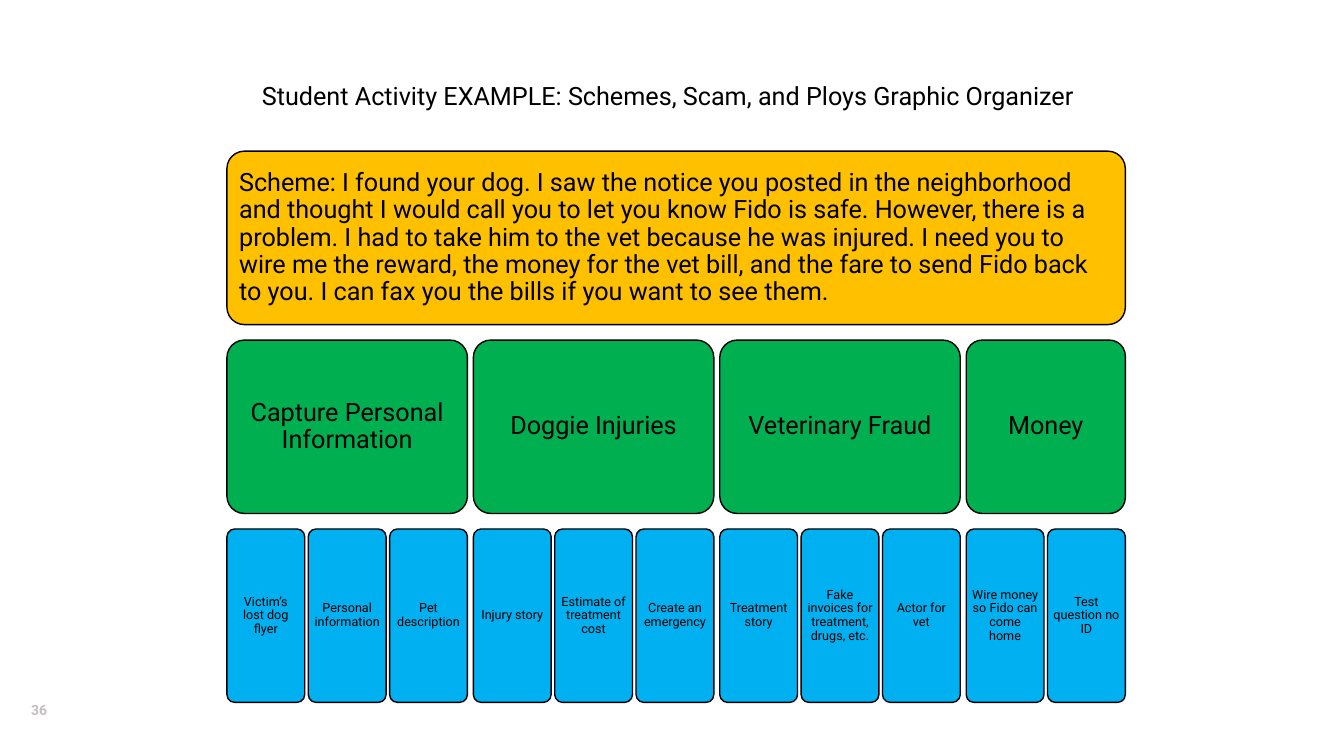
from dataclasses import dataclass

from pptx import Presentation
from pptx.dml.color import RGBColor
from pptx.enum import shapes, text
from pptx.util import Cm, Pt


@dataclass(frozen=True)
class Theme:
    font: str = "Roboto"
    ink: str = "000000"
    muted: str = "C4BFC0"
    scheme: str = "FFC000"
    branch: str = "00B050"
    leaf: str = "00B0F0"
    body_size: int = 18
    leaf_size: int = 9
    number_size: int = 10


SCHEME = (
    "Scheme: I found your dog. I saw the notice you posted in the neighborhood "
    "and thought I would call you to let you know Fido is safe. However, there is "
    "a problem. I had to take him to the vet because he was injured. I need you to "
    "wire me the reward, the money for the vet bill, and the fare to send Fido back "
    "to you. I can fax you the bills if you want to see them."
)
BRANCHES = {
    "Capture Personal Information": [
        "Victim’s lost dog flyer", "Personal information", "Pet description"],
    "Doggie Injuries": [
        "Injury story", "Estimate of treatment cost", "Create an emergency"],
    "Veterinary Fraud": [
        "Treatment story", "Fake invoices for treatment, drugs, etc.", "Actor for vet"],
    "Money": ["Wire money so Fido can come home", "Test question no ID"],
}

# Lengths in centimetres
LEFT = 5.72
SCHEME_TOP, BRANCH_TOP, LEAF_TOP = (3.81 + 4.76 * row for row in range(3))
ROW_HEIGHT = 4.37
LEAF_WIDTH, LEAF_PITCH = 1.96, 2.05
BRANCH_GAP = 0.15


class OrganizerPage:
    def __init__(self, deck, theme):
        self.theme = theme
        self.page = deck.slides.add_slide(deck.slide_layouts[5])

    def set_text(self, box, words, size, color, align, inset, spacing=1.0, bold=False):
        frame = box.text_frame
        frame.text = words
        frame.word_wrap = True
        frame.auto_size = text.MSO_AUTO_SIZE.NONE
        frame.vertical_anchor = text.MSO_ANCHOR.MIDDLE
        frame.margin_left = frame.margin_right = Cm(inset)
        frame.margin_top = frame.margin_bottom = Cm(min(inset, 0.18))
        para = frame.paragraphs[0]
        para.alignment = align
        para.line_spacing = spacing
        para.space_before = Pt(0)
        for span in para.runs:
            span.font.name = self.theme.font
            span.font.size = Pt(size)
            span.font.bold = bold
            span.font.color.rgb = RGBColor.from_string(color)

    def title(self, words):
        box = self.page.shapes.title
        box.left, box.top, box.width, box.height = Cm(6.35), Cm(1.9), Cm(21.59), Cm(1.02)
        self.set_text(box, words, self.theme.body_size, self.theme.ink,
                      text.PP_ALIGN.LEFT, 0.25)

    def card(self, words, left, top, width, fill, size, inset,
             align=text.PP_ALIGN.CENTER):
        box = self.page.shapes.add_shape(
            shapes.MSO_SHAPE.ROUNDED_RECTANGLE,
            Cm(left), Cm(top), Cm(width), Cm(ROW_HEIGHT))
        box.adjustments[0] = 0.1
        box.shadow.inherit = False
        box.fill.solid()
        box.fill.fore_color.rgb = RGBColor.from_string(fill)
        box.line.color.rgb = RGBColor.from_string(self.theme.ink)
        box.line.width = Pt(1)
        self.set_text(box, words, size, self.theme.ink, align, inset, spacing=0.9)

    def page_number(self, number):
        box = self.page.shapes.add_shape(
            shapes.MSO_SHAPE.OVAL, Cm(0), Cm(17.35), Cm(1.98), Cm(1.07))
        box.shadow.inherit = False
        box.fill.background()
        box.line.fill.background()
        self.set_text(box, number, self.theme.number_size, self.theme.muted,
                      text.PP_ALIGN.CENTER, 0.05, bold=True)


def span_width(leaf_count):
    """Width of a row of leaves, from first left edge to last right edge."""
    return (leaf_count - 1) * LEAF_PITCH + LEAF_WIDTH


def main():
    deck = Presentation()
    deck.slide_width, deck.slide_height = Cm(33.87), Cm(19.05)
    theme = Theme()
    organizer = OrganizerPage(deck, theme)
    organizer.title("Student Activity EXAMPLE: Schemes, Scam, and Ploys Graphic Organizer")

    widths = [span_width(len(leaves)) for leaves in BRANCHES.values()]
    total_width = sum(widths) + BRANCH_GAP * (len(widths) - 1)
    organizer.card(SCHEME, LEFT, SCHEME_TOP, total_width, theme.scheme,
                   theme.body_size, 0.18, text.PP_ALIGN.LEFT)

    left = LEFT
    for (branch, leaves), width in zip(BRANCHES.items(), widths):
        organizer.card(branch, left, BRANCH_TOP, width, theme.branch,
                       theme.body_size, 0.18)
        for index, leaf in enumerate(leaves):
            organizer.card(leaf, left + index * LEAF_PITCH, LEAF_TOP, LEAF_WIDTH,
                           theme.leaf, theme.leaf_size, 0.09)
        left += width + BRANCH_GAP

    organizer.page_number("36")
    deck.save("out.pptx")


if __name__ == "__main__":
    main()
